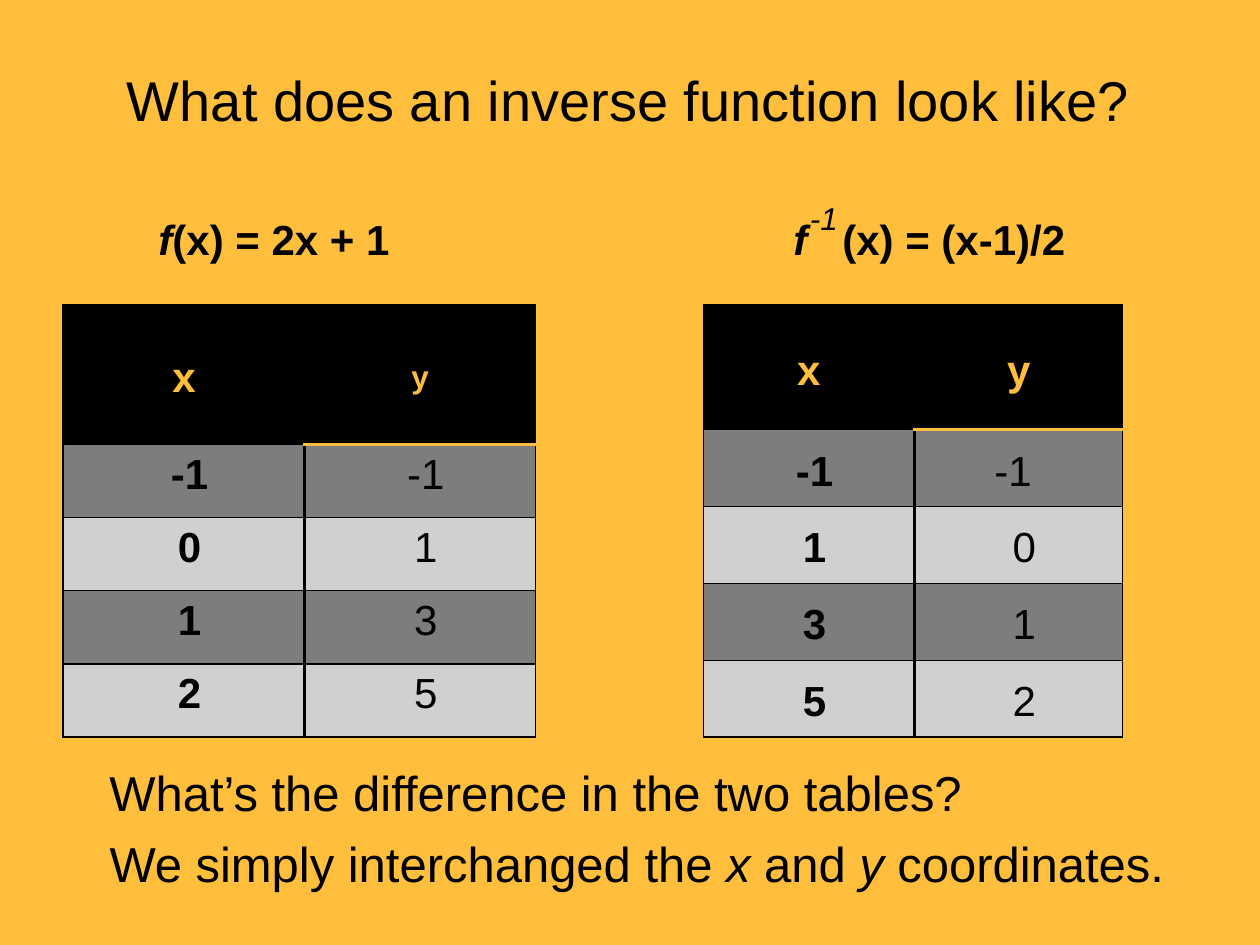
from dataclasses import dataclass

from lxml import etree
from pptx import Presentation
from pptx.dml.color import RGBColor
from pptx.enum.text import MSO_ANCHOR, PP_ALIGN
from pptx.oxml.ns import qn
from pptx.util import Inches, Pt

TOP, MIDDLE, BOTTOM = MSO_ANCHOR.TOP, MSO_ANCHOR.MIDDLE, MSO_ANCHOR.BOTTOM
LEFT, CENTER = PP_ALIGN.LEFT, PP_ALIGN.CENTER


@dataclass(frozen=True)
class Theme:
    font: str = "Arial"
    gold: str = "FFBE3B"
    black: str = "000000"
    dark_band: str = "7D7D7D"
    light_band: str = "D0D0D0"
    title: int = 32
    body: int = 28
    formula: int = 24
    small: int = 18
    thin: float = 0.75
    thick: float = 2


theme = Theme()

prs = Presentation()
prs.slide_width, prs.slide_height = Inches(10), Inches(7.5)
slide = prs.slides.add_slide(prs.slide_layouts[6])
slide.background.fill.solid()
slide.background.fill.fore_color.rgb = RGBColor.from_string(theme.gold)


def add_text(box, runs, size, align=LEFT, anchor=TOP, bold=False, wrap=True):
    """Add one paragraph made of (text, italic) runs and return its frame."""
    frame = slide.shapes.add_textbox(*map(Inches, box)).text_frame
    frame.word_wrap, frame.vertical_anchor = wrap, anchor
    paragraph = frame.paragraphs[0]
    paragraph.alignment = align
    font = paragraph.font
    font.name, font.size, font.bold = theme.font, Pt(size), bold
    font.color.rgb = RGBColor.from_string(theme.black)
    for text, italic in runs:
        run = paragraph.add_run()
        run.text, run.font.italic = text, italic
    return frame


def set_borders(cell, **sides):
    """Give each side (L, R, T, B) a line of (colour, points)."""
    properties = cell._tc.get_or_add_tcPr()
    for position, side in enumerate("LRTB"):
        color, points = sides[side]
        line = etree.Element(qn(f"a:ln{side}"), w=str(Pt(points)))
        fill = etree.SubElement(line, qn("a:solidFill"))
        etree.SubElement(fill, qn("a:srgbClr"), val=color)
        properties.insert(position, line)


# Title
add_text((0.75, 0.33, 8.48, 0.92), [("What does an inverse function look like?", False)],
         theme.title, CENTER, MIDDLE)

# Formulas above the tables
add_text((1.16, 1.42, 2.17, 0.72), [("f", True), ("(x) = 2x + 1", False)],
         theme.formula, anchor=BOTTOM, bold=True)
inverse = add_text((5.5, 1.42, 3.75, 0.72), [("f ", True), ("(x) = (x-1)/2", False)],
                   theme.formula, CENTER, BOTTOM, bold=True)
# Wider letter spacing leaves room for the exponent
inverse.paragraphs[0].runs[0].font._element.set("spc", "667")
add_text((6.33, 1.53, 0.43, 0.4), [("-1", True)], theme.small, wrap=False)

# Tables: left, column widths, header height, row height, y size, body anchor, values
tables = [
    (0.5, (1.92, 1.83), 1.11, 0.58, theme.small, TOP,
     [("-1", "-1"), ("0", "1"), ("1", "3"), ("2", "5")]),
    (5.58, (1.68, 1.65), 0.99, 0.61, theme.formula, MIDDLE,
     [("-1", "-1"), ("1", "0"), ("3", "1"), ("5", "2")]),
]
thin_line = (theme.black, theme.thin)
divider = (theme.black, theme.thick)
header_rule = (theme.gold, theme.thick)

for left, widths, header_height, row_height, y_size, body_anchor, values in tables:
    rows = [("x", "y"), *values]
    table = slide.shapes.add_table(
        len(rows), len(widths), Inches(left), Inches(2.42), Inches(sum(widths)),
        Inches(header_height + row_height * len(values))).table
    for column, width in zip(table.columns, widths):
        column.width = Inches(width)
    for r, row in enumerate(rows):
        header = r == 0
        table.rows[r].height = Inches(header_height if header else row_height)
        for c, value in enumerate(row):
            cell = table.cell(r, c)
            cell.text = value
            cell.vertical_anchor = MIDDLE if header else body_anchor
            cell.margin_top = cell.margin_bottom = 0
            # Body values sit slightly right of centre, except the last table's first y
            shift_left = r == 1 and c == 1 and body_anchor == MIDDLE
            cell.margin_left = Inches(0.07 if header or shift_left else 0.16)
            cell.margin_right = Inches(0.16 if shift_left else 0.07)

            paragraph = cell.text_frame.paragraphs[0]
            paragraph.alignment, paragraph.line_spacing = CENTER, 1.15
            font = paragraph.font
            font.name, font.bold = theme.font, header or c == 0
            font.size = Pt(y_size if header and c == 1 else theme.formula)
            font.color.rgb = RGBColor.from_string(theme.gold if header else theme.black)

            band = theme.dark_band if r % 2 else theme.light_band
            cell.fill.solid()
            cell.fill.fore_color.rgb = RGBColor.from_string(theme.black if header else band)
            set_borders(
                cell,
                L=divider if c == 1 else thin_line,
                R=divider if c == 0 else thin_line,
                T=header_rule if r == 1 and c == 1 else thin_line,
                B=header_rule if header and c == 1 else thin_line)

# Question and answer
add_text((0.77, 6, 8.33, 0.57), [("What’s the difference in the two tables?", False)],
         theme.body)
answer = add_text(
    (0.55, 6.57, 9.5, 0.57),
    [("We simply interchanged the ", False), ("x", True), (" and ", False),
     ("y", True), (" coordinates.", False)], theme.body)
answer.margin_left = Inches(0.32)

prs.save("out.pptx")
